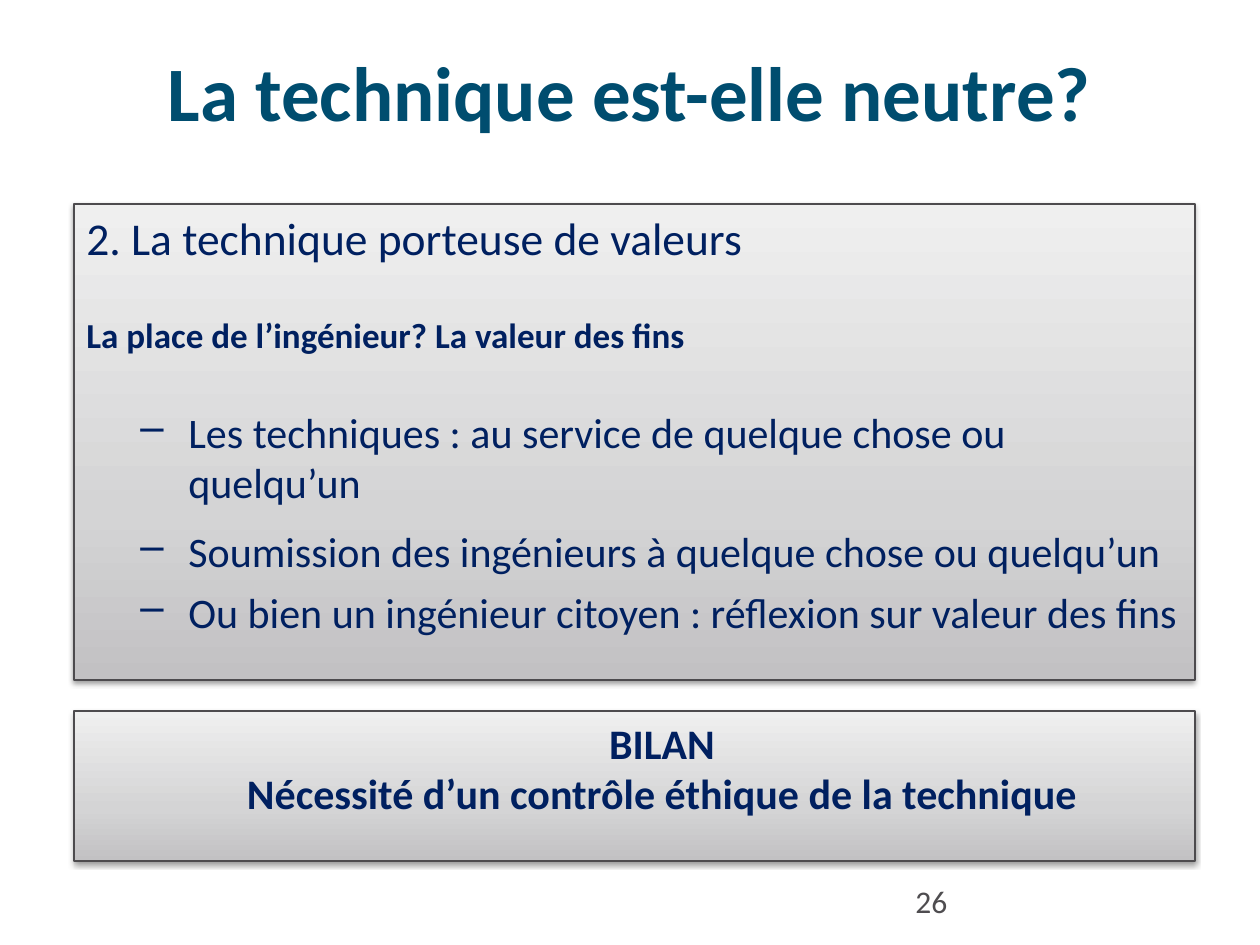
import copy
from dataclasses import dataclass

import lxml.etree
import pptx
import pptx.dml.color
import pptx.enum.shapes
import pptx.enum.text
import pptx.oxml
import pptx.oxml.ns
import pptx.util

EMU_PER_PX = 914400 / 126
TEAL = pptx.dml.color.RGBColor(0x00, 0x4D, 0x6F)
NAVY = pptx.dml.color.RGBColor(0x00, 0x20, 0x60)
GREY = pptx.dml.color.RGBColor(0x4F, 0x4D, 0x50)
OUTLINE = pptx.dml.color.RGBColor(0x4D, 0x4B, 0x4E)
GRADIENT = [
    (0, pptx.dml.color.RGBColor(0xC2, 0xC1, 0xC3)),
    (0.35, pptx.dml.color.RGBColor(0xD4, 0xD4, 0xD5)),
    (1, pptx.dml.color.RGBColor(0xEF, 0xEF, 0xEF)),
]
SHADOW = (
    f'<a:outerShdw {pptx.oxml.ns.nsdecls("a")} blurRad="39370" dist="20320" '
    'dir="5400000" rotWithShape="0">'
    '<a:srgbClr val="000000"><a:alpha val="38000"/></a:srgbClr></a:outerShdw>'
)
LEFT = pptx.enum.text.PP_ALIGN.LEFT
CENTER = pptx.enum.text.PP_ALIGN.CENTER


@dataclass(frozen=True)
class Box:
    left: int
    top: int
    width: int
    height: int


TITLE = Box(63, 38, 1134, 158)
CONTENT = Box(74, 204, 1121, 476)
SUMMARY = Box(74, 711, 1121, 150)
NUMBER = Box(903, 876, 294, 50)


def px(length: int) -> int:
    return round(length * EMU_PER_PX)


def place(box: Box) -> tuple[int, int, int, int]:
    return px(box.left), px(box.top), px(box.width), px(box.height)


def write(frame, text: str, *, size: int, color=NAVY, bold: bool = False,
          align=LEFT, level: int = 0, margin: int = 0, indent: int = 0,
          before: float = 0, after: float = 0, bullet: str = "") -> None:
    first = frame.paragraphs[0]
    paragraph = frame.add_paragraph() if first.runs else first
    paragraph.alignment = align
    paragraph.level = level
    paragraph.space_before = pptx.util.Pt(before)
    paragraph.space_after = pptx.util.Pt(after)
    properties = paragraph._p.get_or_add_pPr()
    properties.set("marL", str(px(margin)))
    properties.set("indent", str(px(indent)))
    if bullet:
        mark = lxml.etree.SubElement(properties, pptx.oxml.ns.qn("a:buChar"))
        mark.set("char", bullet)
    run = paragraph.add_run()
    run.text = text
    run.font.name = "Calibri"
    run.font.size = pptx.util.Pt(size)
    run.font.bold = bold
    run.font.color.rgb = color


def add_text_box(slide, box: Box):
    frame = slide.shapes.add_textbox(*place(box)).text_frame
    frame.word_wrap = True
    return frame


def add_panel(slide, box: Box):
    shape = slide.shapes.add_shape(
        pptx.enum.shapes.MSO_SHAPE.RECTANGLE, *place(box))
    shape.fill.gradient()
    shape.fill.gradient_angle = 90
    properties = shape._element.spPr
    stop_list = properties.find(".//" + pptx.oxml.ns.qn("a:gsLst"))
    stop_list.append(copy.deepcopy(stop_list[0]))
    for stop, (position, color) in zip(shape.fill.gradient_stops, GRADIENT):
        stop.position = position
        stop.color.rgb = color
    shape.line.color.rgb = OUTLINE
    shape.line.width = pptx.util.Pt(0.75)
    shape.shadow.inherit = False
    effects = properties.find(pptx.oxml.ns.qn("a:effectLst"))
    effects.append(pptx.oxml.parse_xml(SHADOW))
    frame = shape.text_frame
    frame.word_wrap = True
    frame.vertical_anchor = pptx.enum.text.MSO_ANCHOR.TOP
    return frame


def main() -> None:
    presentation = pptx.Presentation()
    presentation.slide_width = pptx.util.Inches(10)
    presentation.slide_height = pptx.util.Inches(7.5)
    slide = presentation.slides.add_slide(presentation.slide_layouts[6])

    write(add_text_box(slide, TITLE), "La technique est-elle neutre?",
          size=44, color=TEAL, bold=True, align=CENTER)

    content = add_panel(slide, CONTENT)
    write(content, "2. La technique porteuse de valeurs", size=26, after=24)
    write(content, "La place de l’ingénieur? La valeur des fins",
          size=20, bold=True, before=4, after=24)
    for text, before, after in [
        ("Les techniques : au service de quelque chose ou quelqu’un", 4.8, 6),
        ("Soumission des ingénieurs à quelque chose ou quelqu’un", 4.8, 6),
        ("Ou bien un ingénieur citoyen : réflexion sur valeur des fins", 0, 0),
    ]:
        write(content, text, size=24, level=1, margin=102, indent=-48,
              before=before, after=after, bullet="–")

    write(add_text_box(slide, NUMBER), "26", size=18, color=GREY)

    summary = add_panel(slide, SUMMARY)
    for text in ["BILAN", "Nécessité d’un contrôle éthique de la technique"]:
        write(summary, text, size=24, bold=True, align=CENTER,
              level=1, margin=55)

    presentation.save("out.pptx")


if __name__ == "__main__":
    main()
